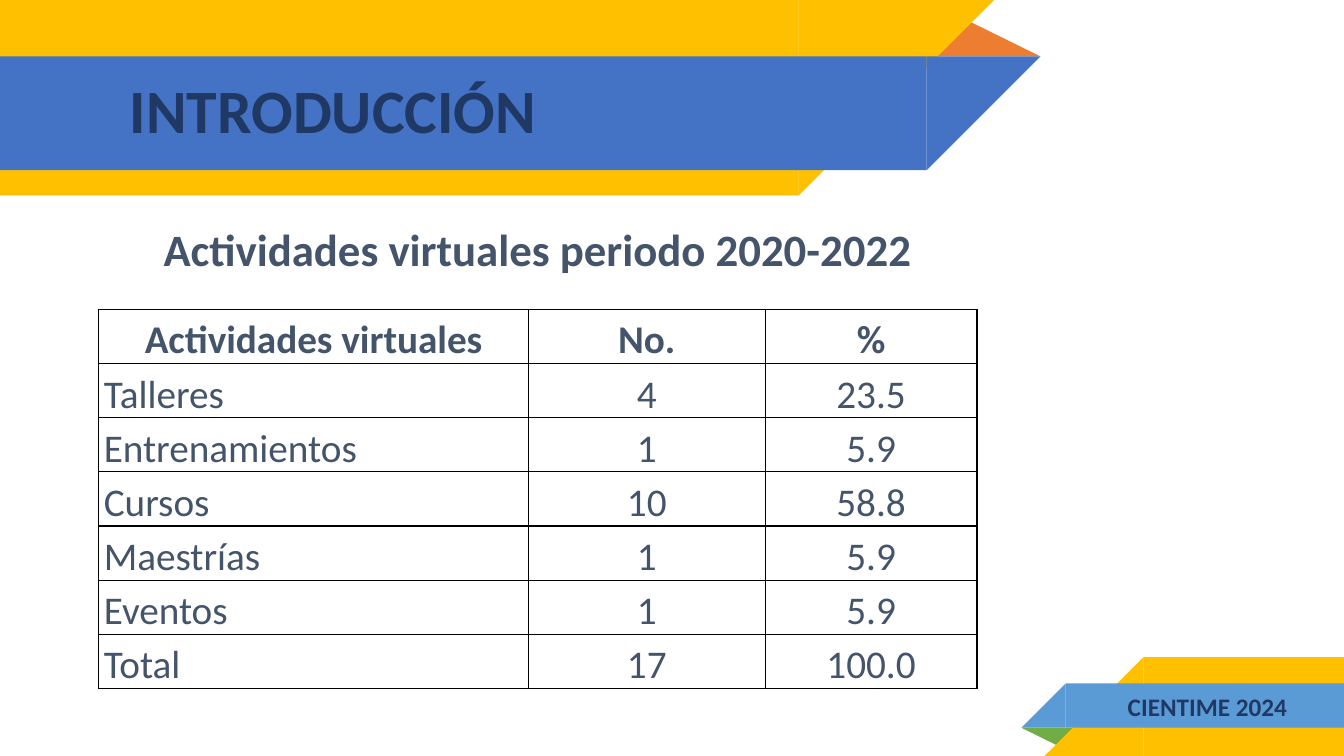
from pptx import Presentation
from pptx.dml.color import RGBColor
from pptx.enum import shapes, text
from pptx.oxml import parse_xml
from pptx.oxml.ns import nsdecls
from pptx.util import Inches, Pt

FONT = "Calibri"
NAVY, SLATE, GOLD = "203864", "44546A", "FFC000"
CENTER, LEFT = text.PP_ALIGN.CENTER, text.PP_ALIGN.LEFT
ROWS = [
    ("Actividades virtuales", "No.", "%"),
    ("Talleres", "4", "23.5"),
    ("Entrenamientos", "1", "5.9"),
    ("Cursos", "10", "58.8"),
    ("Maestrías", "1", "5.9"),
    ("Eventos", "1", "5.9"),
    ("Total", "17", "100.0"),
]


def rgb(color):
    return RGBColor.from_string(color)


def add_run(p, content, size, color, bold):
    r = p.add_run()
    r.text = content
    r.font.name = FONT
    r.font.size = Pt(size)
    r.font.bold = bold
    r.font.color.rgb = rgb(color)


def add_piece(slide, kind, box, color, turned=False, flipped=False):
    sp = slide.shapes.add_shape(kind, *map(Inches, box))
    sp.shadow.inherit = False
    sp.fill.solid()
    sp.fill.fore_color.rgb = rgb(color)
    sp.line.fill.background()
    if turned:
        sp.rotation = 180
    if flipped:
        sp._element.spPr.xfrm.set("flipH", "1")
    return sp


def add_fold(slide, box, color, turned=False):
    sp = add_piece(slide, shapes.MSO_SHAPE.ISOSCELES_TRIANGLE, box, color, turned)
    sp.adjustments[0] = 0.324


def add_ribbon(slide, left, top, length, height, color, from_left):
    tip = left + length if from_left else left - height
    kinds = shapes.MSO_SHAPE
    add_piece(slide, kinds.RECTANGLE, (left, top, length, height), color)
    add_piece(slide, kinds.RIGHT_TRIANGLE, (tip, top, height, height), color,
              turned=from_left, flipped=True)


def add_label(slide, box, content, size, color, align=CENTER, inset=0.05):
    tf = slide.shapes.add_textbox(*map(Inches, box)).text_frame
    tf.word_wrap = True
    tf.vertical_anchor = text.MSO_ANCHOR.MIDDLE
    tf.margin_top = tf.margin_bottom = Inches(inset)
    p = tf.paragraphs[0]
    p.alignment = align
    add_run(p, content, size, color, True)
    return p


def add_borders(cell):
    tcPr = cell._tc.get_or_add_tcPr()
    for side in ("lnL", "lnR", "lnT", "lnB"):
        tcPr.append(parse_xml(
            f'<a:{side} {nsdecls("a")} w="{Pt(1)}"><a:solidFill>'
            f'<a:srgbClr val="000000"/></a:solidFill></a:{side}>'))


def fill_cell(cell, content, align, anchor, bold):
    add_borders(cell)
    cell.fill.background()
    cell.vertical_anchor = anchor
    cell.margin_left = cell.margin_right = Inches(0.05)
    cell.margin_top = cell.margin_bottom = 0
    p = cell.text_frame.paragraphs[0]
    p.alignment = align
    p.line_spacing = 1.15
    p.space_after = Pt(10)
    add_run(p, content, 28, SLATE, bold)


def add_activity_table(slide, left, top, widths, row_height):
    frame = slide.shapes.add_table(
        len(ROWS), len(widths), Inches(left), Inches(top),
        Inches(sum(widths)), Inches(row_height * len(ROWS)))
    table = frame.table
    table.first_row = table.horz_banding = False
    for column, width in zip(table.columns, widths):
        column.width = Inches(width)
    for i, row in enumerate(ROWS):
        for j, content in enumerate(row):
            align = LEFT if i and j == 0 else CENTER
            ends = j == 0 and i in (0, len(ROWS) - 1)
            anchor = text.MSO_ANCHOR.BOTTOM if ends else text.MSO_ANCHOR.MIDDLE
            fill_cell(table.cell(i, j), content, align, anchor, i == 0)


def main():
    prs = Presentation()
    prs.slide_width, prs.slide_height = Inches(13.33), Inches(7.5)
    slide = prs.slides.add_slide(prs.slide_layouts[6])

    add_fold(slide, (9.18, 0.18, 1.14, 0.38), "ED7D31")
    add_ribbon(slide, 0, 0, 7.92, 1.94, GOLD, from_left=True)
    add_ribbon(slide, 0, 0.56, 9.19, 1.13, "4472C4", from_left=True)
    add_fold(slide, (10.13, 7.22, 0.57, 0.19), "70AD47", turned=True)
    add_ribbon(slide, 11.34, 6.52, 1.99, 0.98, GOLD, from_left=False)
    add_ribbon(slide, 10.57, 6.78, 2.76, 0.44, "5B9BD5", from_left=False)

    title = add_label(slide, (1.19, 0.57, 7.67, 1.12), "INTRODUCCIÓN", 44, NAVY,
                      LEFT, inset=0.1)
    title.line_spacing = 0.9
    add_label(slide, (10.89, 6.81, 2.17, 0.4), "CIENTIME 2024", 18, NAVY)
    add_activity_table(slide, 0.98, 3.07, (4.26, 2.35, 2.1), 0.5)
    add_label(slide, (1.19, 2.15, 8.29, 0.64),
              "Actividades virtuales periodo 2020-2022", 32, SLATE)
    prs.save("out.pptx")


if __name__ == "__main__":
    main()
